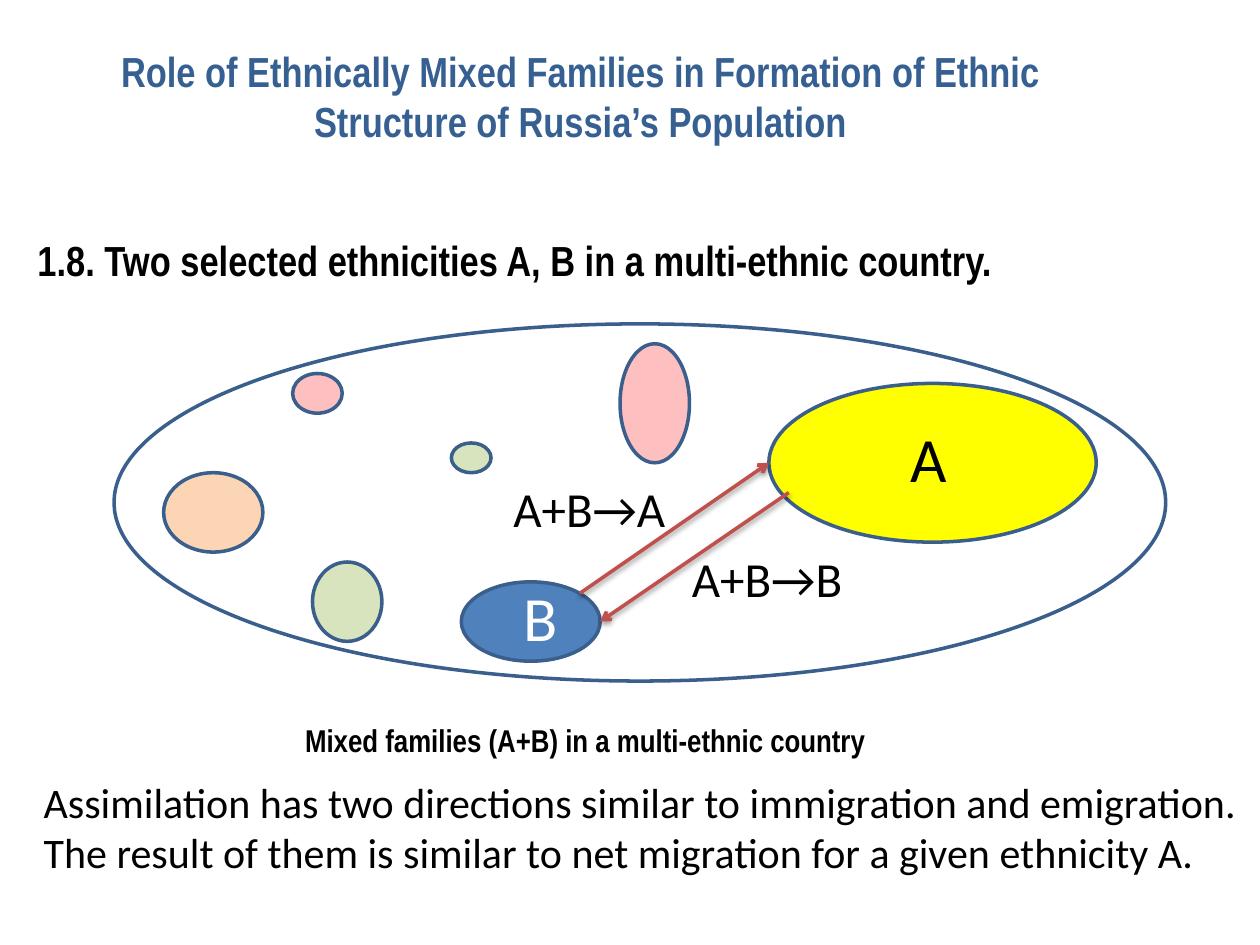
from lxml.etree import SubElement
from pptx import Presentation
from pptx.dml.color import RGBColor
from pptx.enum.shapes import MSO_CONNECTOR as LINE, MSO_SHAPE as SHAPE
from pptx.enum.text import MSO_ANCHOR as ANCHOR, PP_ALIGN as ALIGN
from pptx.oxml import parse_xml
from pptx.oxml.ns import nsdecls, qn
from pptx.util import Cm, Pt

TITLE = "Role of Ethnically Mixed Families in Formation of Ethnic Structure of Russia’s Population"
HEADING = "1.8. Two selected ethnicities A, B in a multi-ethnic country."
CAPTION = "Mixed families (A+B) in a multi-ethnic country"
CONCLUSION = [
    "Assimilation has two directions similar to immigration and emigration.",
    "The result of them is similar to net migration for a given ethnicity A.",
]
OUTLINE, ARROW, BLACK = "3A5F8C", "C0504D", "000000"
ELLIPSES = [
    ((2.3, 6.53, 21.2, 7.2), None),
    ((9.3, 11.73, 2.8, 1.6), "4F81BD"),
    ((15.5, 7.73, 6.6, 3.2), "FFFF00"),
    ((3.3, 9.53, 2, 1.6), "FCD5B5"),
    ((9.1, 8.93, 0.8, 0.6), "D7E4BD"),
    ((12.5, 6.93, 1.4, 2.4), "FDBFC0"),
    ((6.3, 11.33, 1.4, 1.6), "D7E4BD"),
    ((5.9, 7.53, 1, 0.8), "FDBFC0"),
]
ARROWS = [(11.69, 11.96, 15.5, 9.33), (15.9, 9.93, 12.1, 12.53)]
LABELS = [
    (["A"], (18.1, 8.33, 1.25, 1.8), 36, BLACK, False),
    (["B"], (10.3, 11.53, 0.8, 1.8), 36, "FFFFFF", True),
    (["A+B→A"], (10.1, 9.53, 3.6, 1.45), 28, BLACK, False),
    (["A+B→B"], (13.7, 10.93, 3.6, 1.45), 28, BLACK, False),
    (CONCLUSION, (0.63, 15.53, 24.77, 2.3), 24, BLACK, False),
]
SHADOW = (
    f'<a:effectLst {nsdecls("a")}><a:outerShdw blurRad="40000" dist="20000" dir="5400000" '
    'rotWithShape="0"><a:srgbClr val="000000"><a:alpha val="38000"/></a:srgbClr>'
    "</a:outerShdw></a:effectLst>"
)


def color(value):
    return RGBColor.from_string(value)


def place(sp, box):
    sp.left, sp.top, sp.width, sp.height = map(Cm, box)


def write(sp, lines, size, ink, font="Calibri", bold=False, align=ALIGN.LEFT,
          anchor=ANCHOR.TOP, wrap=True):
    tf = sp.text_frame
    tf.word_wrap = wrap
    tf.vertical_anchor = anchor
    for i, line in enumerate(lines):
        p = tf.add_paragraph() if i else tf.paragraphs[0]
        p.alignment = align
        p.space_before = Pt(0)
        r = p.add_run()
        r.text = line
        r.font.name, r.font.size, r.font.bold = font, Pt(size), bold
        r.font.color.rgb = color(ink)


def add_ellipse(box, fill):
    sp = slide.shapes.add_shape(SHAPE.OVAL, *map(Cm, box))
    sp.shadow.inherit = False
    if fill:
        sp.fill.solid()
        sp.fill.fore_color.rgb = color(fill)
    else:
        sp.fill.background()
    sp.line.color.rgb = color(OUTLINE)
    sp.line.width = Pt(2)


def add_arrow(ends):
    line = slide.shapes.add_connector(LINE.STRAIGHT, *map(Cm, ends))
    line.line.color.rgb = color(ARROW)
    line.line.width = Pt(2)
    spPr = line._element.spPr
    SubElement(spPr.find(qn("a:ln")), qn("a:tailEnd"), type="arrow")
    spPr.append(parse_xml(SHADOW))


prs = Presentation()
prs.slide_width, prs.slide_height = Cm(25.4), Cm(19.05)
slide = prs.slides.add_slide(prs.slide_layouts[0])

title, heading = slide.placeholders
place(title, (0.7, 0.53, 22, 2.8))
place(heading, (0.5, 3.53, 24.9, 4.4))
heading.text_frame.margin_bottom = Cm(1.1)
caption = slide.shapes.add_textbox(*map(Cm, (5.9, 14.12, 14, 1.6)))
for sp, text, size, ink, align in [
    (title, TITLE, 24, "376092", ALIGN.CENTER),
    (heading, HEADING, 24, BLACK, ALIGN.LEFT),
    (caption, CAPTION, 18, BLACK, ALIGN.LEFT),
]:
    write(sp, [text], size, ink, "Arial Narrow", True, align, ANCHOR.MIDDLE)

for box, fill in ELLIPSES:
    add_ellipse(box, fill)
for ends in ARROWS:
    add_arrow(ends)
for lines, box, size, ink, wrap in LABELS:
    write(slide.shapes.add_textbox(*map(Cm, box)), lines, size, ink, wrap=wrap)

prs.save("out.pptx")
